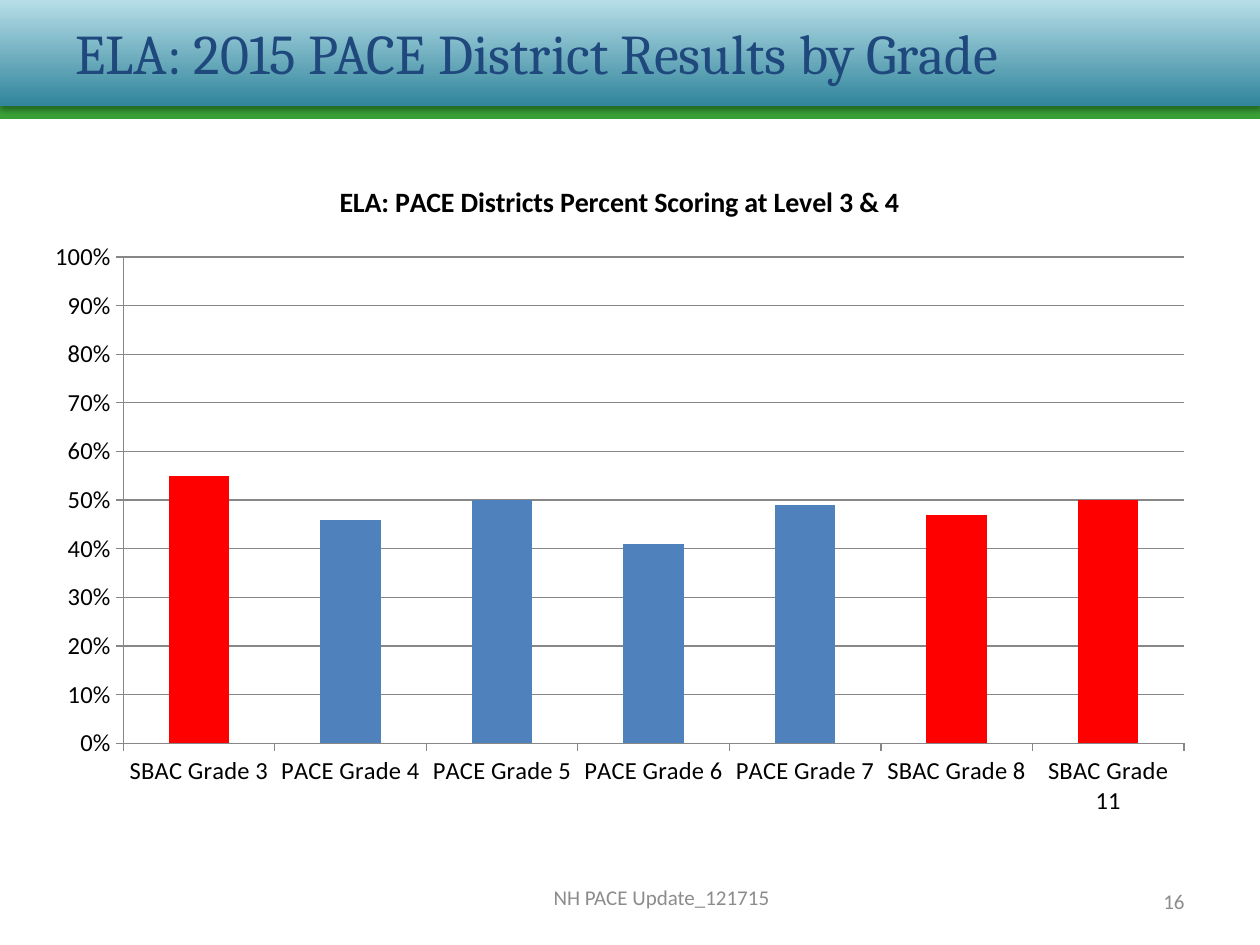
from lxml import etree
from pptx import Presentation
from pptx.chart.data import CategoryChartData
from pptx.dml.color import RGBColor
from pptx.enum.chart import XL_CHART_TYPE, XL_TICK_MARK
from pptx.enum.shapes import MSO_SHAPE
from pptx.enum.text import MSO_ANCHOR, PP_ALIGN
from pptx.oxml.ns import qn
from pptx.util import Pt

COLUMN = XL_CHART_TYPE.COLUMN_CLUSTERED
TICK_OUT = XL_TICK_MARK.OUTSIDE
TICK_NONE = XL_TICK_MARK.NONE
RECTANGLE = MSO_SHAPE.RECTANGLE
MIDDLE = MSO_ANCHOR.MIDDLE
LEFT, CENTER, RIGHT = PP_ALIGN.LEFT, PP_ALIGN.CENTER, PP_ALIGN.RIGHT

RESULTS = {
    "SBAC Grade 3": 0.55,
    "PACE Grade 4": 0.46,
    "PACE Grade 5": 0.5,
    "PACE Grade 6": 0.41,
    "PACE Grade 7": 0.49,
    "SBAC Grade 8": 0.47,
    "SBAC Grade 11": 0.5,
}
PACE_BLUE = "4F81BD"
SBAC_RED = "FF0000"
AXIS_GRAY = "878787"
FOOTER_GRAY = "8C8C8C"


def rgb(value):
    return RGBColor.from_string(value)


def style_font(font, size, color="000000", name="Calibri", bold=False):
    font.size = Pt(size)
    font.name = name
    font.bold = bold
    font.color.rgb = rgb(color)


def add_text(slide, text, left, top, width, height, align=LEFT, **font_format):
    box = slide.shapes.add_textbox(Pt(left), Pt(top), Pt(width), Pt(height))
    frame = box.text_frame
    frame.word_wrap = True
    frame.vertical_anchor = MIDDLE
    paragraph = frame.paragraphs[0]
    paragraph.alignment = align
    run = paragraph.add_run()
    run.text = text
    style_font(run.font, **font_format)


def add_band(slide, top, height):
    band = slide.shapes.add_shape(RECTANGLE, Pt(0), Pt(top), Pt(720), Pt(height))
    band.shadow.inherit = False
    band.line.fill.background()
    return band


def add_drop_shadow(band, color, alpha, blur, distance):
    effects = band._element.spPr.find(qn("a:effectLst"))
    shadow = etree.SubElement(
        effects, qn("a:outerShdw"), blurRad=str(Pt(blur)), dist=str(Pt(distance)),
        dir="5400000", rotWithShape="0")
    shade = etree.SubElement(shadow, qn("a:srgbClr"), val=color)
    etree.SubElement(shade, qn("a:alpha"), val=str(alpha * 1000))


def add_header(slide):
    stripe = add_band(slide, 53.5, 14.5)
    stripe.fill.solid()
    stripe.fill.fore_color.rgb = rgb("39A036")

    banner = add_band(slide, 0, 60.5)
    banner.fill.gradient()
    banner.fill.gradient_angle = 90
    for stop, color, position in zip(
            banner.fill.gradient_stops, ("31859C", "B7DEE8"), (0, 1)):
        stop.color.rgb = rgb(color)
        stop.position = position
    add_drop_shadow(banner, "000000", alpha=35, blur=3.1, distance=1.8)


def style_line(line):
    line.color.rgb = rgb(AXIS_GRAY)
    line.width = Pt(0.75)


def style_axis(axis):
    axis.major_tick_mark = TICK_OUT
    axis.minor_tick_mark = TICK_NONE
    style_line(axis.format.line)
    style_font(axis.tick_labels.font, 14)


def add_results_chart(slide):
    data = CategoryChartData(number_format="0%")
    data.categories = list(RESULTS)
    data.add_series("Series 1", list(RESULTS.values()))
    chart = slide.shapes.add_chart(
        COLUMN, Pt(18), Pt(90), Pt(672), Pt(384), data).chart
    style_font(chart.font, 14)
    chart.has_legend = False
    chart.has_title = True
    heading = chart.chart_title.text_frame
    heading.text = "ELA: PACE Districts Percent Scoring at Level 3 & 4"
    style_font(heading.paragraphs[0].runs[0].font, 16, bold=True)

    percents = chart.value_axis
    percents.minimum_scale = 0
    percents.maximum_scale = 1
    percents.major_unit = 0.1
    percents.has_major_gridlines = True
    style_line(percents.major_gridlines.format.line)
    percents.tick_labels.number_format = "0%"
    percents.tick_labels.number_format_is_linked = False
    style_axis(percents)
    style_axis(chart.category_axis)

    plot = chart.plots[0]
    plot.gap_width = 150
    plot.vary_by_categories = False
    bars = plot.series[0]
    bars.format.fill.solid()
    bars.format.fill.fore_color.rgb = rgb(PACE_BLUE)
    for index, grade in enumerate(RESULTS):
        if grade.startswith("SBAC"):
            fill = bars.points[index].format.fill
            fill.solid()
            fill.fore_color.rgb = rgb(SBAC_RED)


def main():
    deck = Presentation()
    deck.slide_width, deck.slide_height = Pt(720), Pt(540)
    slide = deck.slides.add_slide(deck.slide_layouts[6])
    add_header(slide)
    add_text(slide, "ELA: 2015 PACE District Results by Grade", 36, 10, 642, 39,
             size=32, name="Cambria", color="1F497D")
    add_text(slide, "16", 600, 500.5, 84, 29, align=RIGHT, size=12, color=FOOTER_GRAY)
    add_text(slide, "NH PACE Update_121715", 168, 498, 420, 29, align=CENTER,
             size=12, color=FOOTER_GRAY)
    add_results_chart(slide)
    deck.save("out.pptx")


if __name__ == "__main__":
    main()
